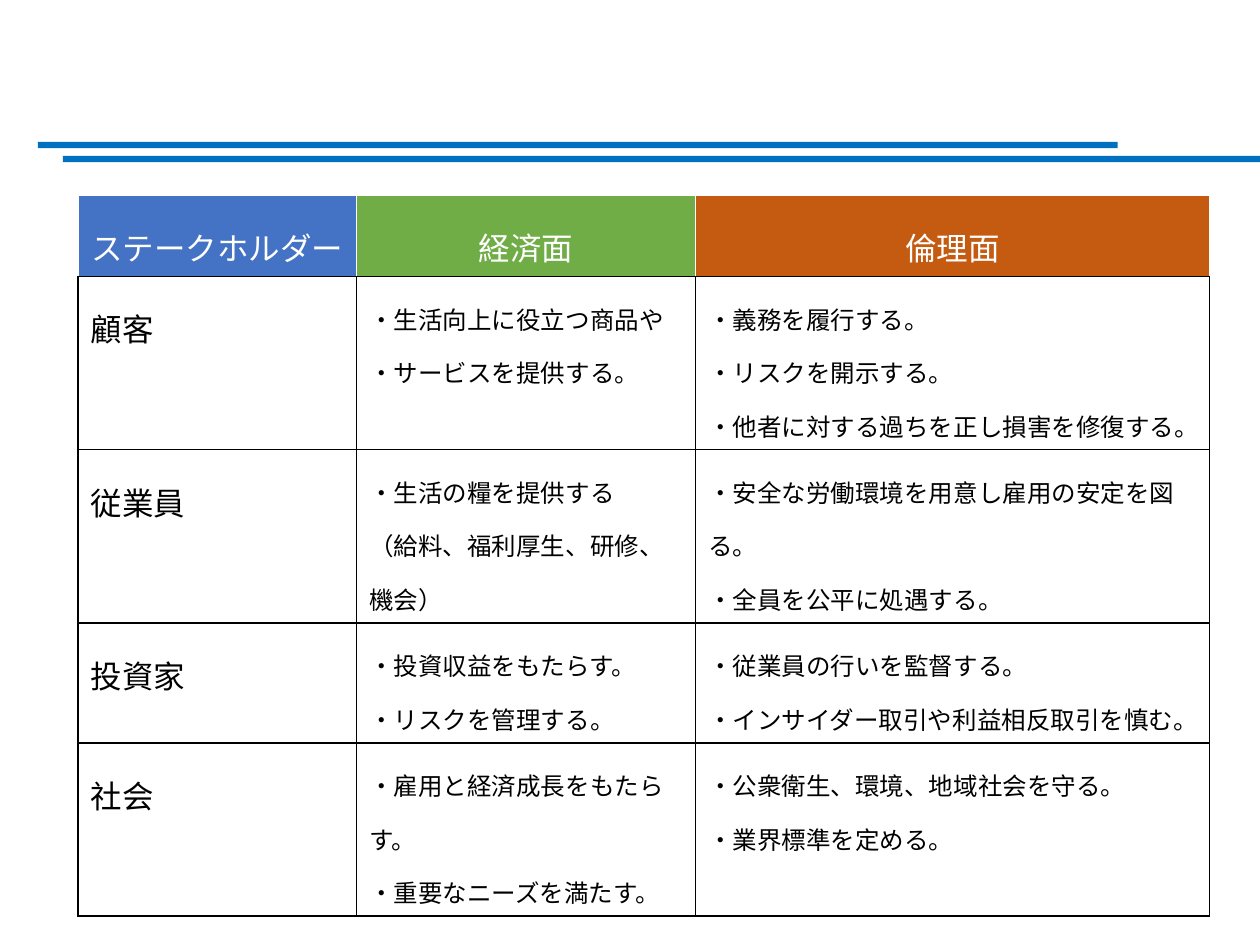
from lxml import etree
from pptx import Presentation
from pptx.dml.color import RGBColor
from pptx.enum.shapes import MSO_SHAPE
from pptx.enum.text import PP_ALIGN
from pptx.oxml.ns import qn
from pptx.util import Inches, Pt

RECT = MSO_SHAPE.RECTANGLE
LEFT, CENTER = PP_ALIGN.LEFT, PP_ALIGN.CENTER
WHITE = RGBColor(0xFF, 0xFF, 0xFF)
BLACK = RGBColor(0x00, 0x00, 0x00)
RULE_BLUE = RGBColor(0x00, 0x70, 0xC0)
HEADER_FILLS = [
    RGBColor(0x44, 0x72, 0xC4),
    RGBColor(0x70, 0xAD, 0x47),
    RGBColor(0xC5, 0x5A, 0x11),
]
FONT = "Noto Sans CJK JP"
WIDTH, HEIGHT = Inches(10), Inches(7.5)
COLUMNS = [2.21, 2.69, 4.08]
ROWS = [0.47, 1.13, 0.81, 0.78, 1]
HEADERS = ["ステークホルダー", "経済面", "倫理面"]
STAKEHOLDERS = [
    ("顧客",
     "・生活向上に役立つ商品や\n・サービスを提供する。",
     "・義務を履行する。\n・リスクを開示する。\n・他者に対する過ちを正し損害を修復する。"),
    ("従業員",
     "・生活の糧を提供する\n（給料、福利厚生、研修、機会）",
     "・安全な労働環境を用意し雇用の安定を図る。\n・全員を公平に処遇する。"),
    ("投資家",
     "・投資収益をもたらす。\n・リスクを管理する。",
     "・従業員の行いを監督する。\n・インサイダー取引や利益相反取引を慎む。"),
    ("社会",
     "・雇用と経済成長をもたらす。\n・重要なニーズを満たす。",
     "・公衆衛生、環境、地域社会を守る。\n・業界標準を定める。"),
]


def add_rule(s, left, top, width):
    """Draw a thin blue bar placed by shares of the slide's size."""
    sp = s.shapes.add_shape(RECT, int(WIDTH * left), int(HEIGHT * top),
                            int(WIDTH * width), Inches(0.05))
    sp.shadow.inherit = False
    sp.fill.solid()
    sp.fill.fore_color.rgb = RULE_BLUE
    sp.line.fill.background()


def write_text(tf, text, size=14, color=BLACK, align=LEFT):
    """Write one paragraph for each line of the text."""
    for i, line in enumerate(text.split("\n")):
        p = tf.add_paragraph() if i else tf.paragraphs[0]
        p.alignment = align
        p.line_spacing = 1.5
        r = p.add_run()
        r.text = line
        r.font.size = Pt(size)
        r.font.color.rgb = color
        r.font.name = FONT
        etree.SubElement(r.font._element, qn("a:ea"), typeface=FONT)


def set_borders(cell, color, bottom):
    """Give the cell one-point lines, with their own colour at the bottom."""
    tcPr = cell._tc.get_or_add_tcPr()
    sides = {"L": color, "R": color, "T": color, "B": bottom}
    for side, rgb in sides.items():
        ln = etree.SubElement(tcPr, qn(f"a:ln{side}"), w=str(Pt(1)))
        fill = etree.SubElement(ln, qn("a:solidFill"))
        etree.SubElement(fill, qn("a:srgbClr"), val=str(rgb))


def fill_cell(cell, text, fill=WHITE, border=BLACK, **text_format):
    """Set the borders, fill and text of a table cell."""
    set_borders(cell, border, BLACK)
    cell.fill.solid()
    cell.fill.fore_color.rgb = fill
    write_text(cell.text_frame, text, **text_format)


def add_stakeholder_table(s):
    """Add the table of economic and ethical duties to each stakeholder."""
    table = s.shapes.add_table(len(ROWS), len(COLUMNS), Inches(0.62), Inches(1.55),
                               Inches(sum(COLUMNS)), Inches(sum(ROWS))).table
    for column, width in zip(table.columns, COLUMNS):
        column.width = Inches(width)
    for row, height in zip(table.rows, ROWS):
        row.height = Inches(height)
    for c, (header, fill) in enumerate(zip(HEADERS, HEADER_FILLS)):
        fill_cell(table.cell(0, c), header, fill=fill, border=WHITE,
                  size=18, color=WHITE, align=CENTER)
    for r, texts in enumerate(STAKEHOLDERS, start=1):
        for c, text in enumerate(texts):
            fill_cell(table.cell(r, c), text, size=14 if c else 18)


def main():
    """Build the slide and save it."""
    prs = Presentation()
    prs.slide_width, prs.slide_height = WIDTH, HEIGHT
    s = prs.slides.add_slide(prs.slide_layouts[6])
    add_rule(s, 0.03, 0.15, 0.857)
    add_rule(s, 0.05, 0.165, 0.95)
    add_stakeholder_table(s)
    prs.save("out.pptx")


if __name__ == "__main__":
    main()
